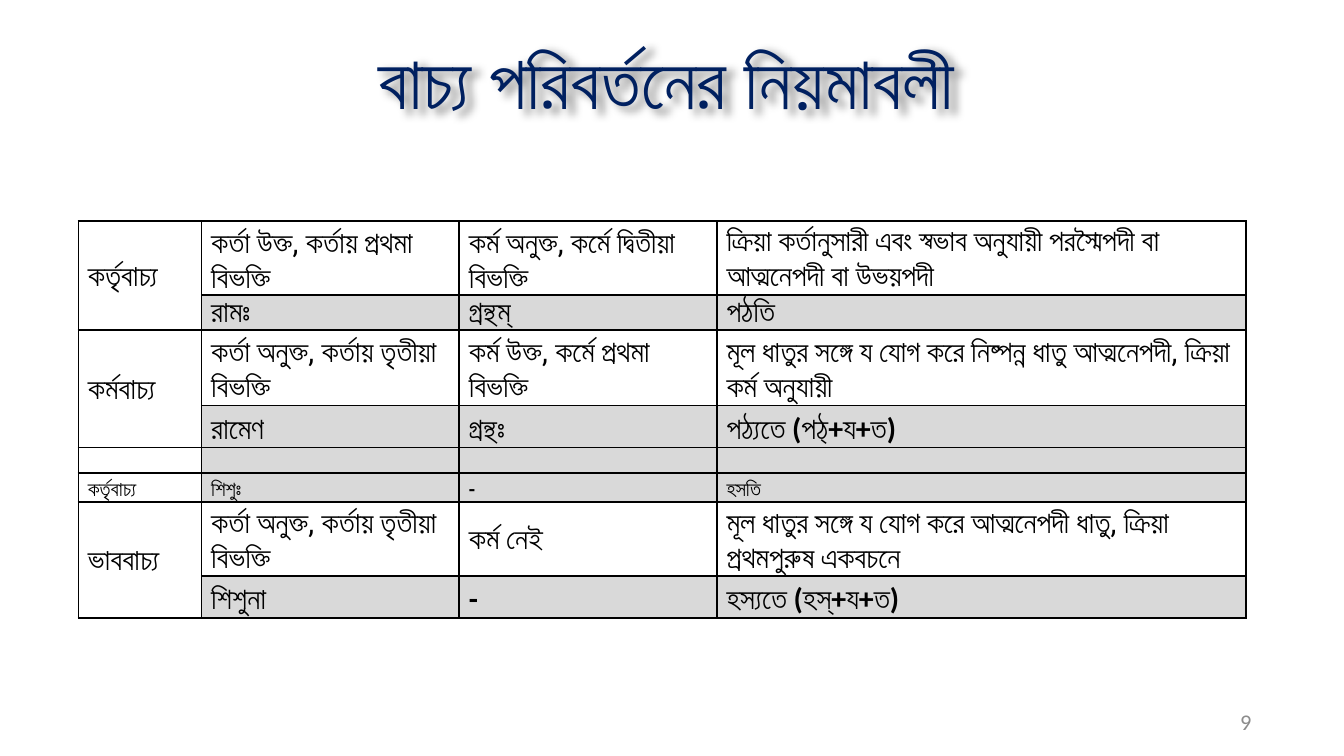
from lxml.etree import SubElement
from pptx import Presentation
from pptx.dml.color import RGBColor
from pptx.enum.text import MSO_ANCHOR as Anchor, PP_ALIGN as Align
from pptx.oxml.ns import qn
from pptx.util import Cm, Pt

TITLE = "বাচ্য পরিবর্তনের নিয়মাবলী"
COLUMNS = [2.33, 4.87, 4.87, 10]
HEIGHTS = [1.4, 0.64, 1.42, 0.79, 0.47, 0.55, 1.4, 0.79]
ROWS = [
    ["কর্তৃবাচ্য", "কর্তা উক্ত, কর্তায় প্রথমা বিভক্তি", "কর্ম অনুক্ত, কর্মে দ্বিতীয়া বিভক্তি",
     "ক্রিয়া কর্তানুসারী এবং স্বভাব অনুযায়ী পরস্মৈপদী বা আত্মনেপদী বা উভয়পদী"],
    ["", "রামঃ", "গ্রন্থম্", "পঠতি"],
    ["কর্মবাচ্য", "কর্তা অনুক্ত, কর্তায় তৃতীয়া বিভক্তি", "কর্ম উক্ত, কর্মে প্রথমা বিভক্তি",
     "মূল ধাতুর সঙ্গে য যোগ করে নিষ্পন্ন ধাতু আত্মনেপদী, ক্রিয়া কর্ম অনুযায়ী"],
    ["", "রামেণ", "গ্রন্থঃ", "পঠ্যতে (পঠ্+য+ত)"],
    ["", "", "", ""],
    ["কর্তৃবাচ্য", "শিশুঃ", "-", "হসতি"],
    ["ভাববাচ্য", "কর্তা অনুক্ত, কর্তায় তৃতীয়া বিভক্তি", "কর্ম নেই",
     "মূল ধাতুর সঙ্গে য যোগ করে আত্মনেপদী ধাতু, ক্রিয়া প্রথমপুরুষ একবচনে"],
    ["", "শিশুনা", "-", "হস্যতে (হস্+য+ত)"],
]
RULE_ROWS = (0, 2, 6)
SMALL_ROWS = (4, 5)
SPACING = {0: 0.96, 1: 0.92, 2: 0.96, 6: 0.96}


def rgb(value):
    return RGBColor.from_string(value)


def apply(target, **values):
    for name, value in values.items():
        setattr(target, name, value)


class Deck:
    ink, navy, grey, shade = "000000", "002060", "8C8C8C", "D9D9D9"
    body_font, title_font = "Calibri", "Roboto"

    def __init__(self):
        self.prs = Presentation()
        apply(self.prs, slide_width=Cm(25.4), slide_height=Cm(14.29))
        self.s = self.prs.slides.add_slide(self.prs.slide_layouts[5])

    def run(self, p, text, size, color, font, bold=False):
        r = p.add_run()
        r.text = text
        apply(r.font, size=Pt(size), name=font, bold=bold)
        r.font.color.rgb = rgb(color)
        for tag in ("a:ea", "a:cs"):
            SubElement(r.font._element, qn(tag), typeface=font)

    def title(self, text, left, top, width, height):
        sp = self.s.shapes.title
        apply(sp, left=Cm(left), top=Cm(top), width=Cm(width), height=Cm(height))
        apply(sp.text_frame, vertical_anchor=Anchor.MIDDLE, word_wrap=True)
        p = sp.text_frame.paragraphs[0]
        p.alignment = Align.CENTER
        self.run(p, text, 40, self.navy, self.title_font, True)
        effects = SubElement(sp._element.spPr, qn("a:effectLst"))
        shadow = SubElement(effects, qn("a:outerShdw"), blurRad="50800", dist="38100",
                            dir="2700000", algn="tl", rotWithShape="0")
        color = SubElement(shadow, qn("a:srgbClr"), val=self.ink)
        SubElement(color, qn("a:alpha"), val="30000")

    def number(self, text, left, top, width, height):
        sp = self.s.shapes.add_textbox(Cm(left), Cm(top), Cm(width), Cm(height))
        apply(sp.text_frame, vertical_anchor=Anchor.MIDDLE, word_wrap=True)
        p = sp.text_frame.paragraphs[0]
        p.alignment = Align.RIGHT
        self.run(p, text, 12, self.grey, self.body_font)

    def borders(self, cell):
        tc_pr = cell._tc.get_or_add_tcPr()
        for side in ("a:lnL", "a:lnR", "a:lnT", "a:lnB"):
            ln = SubElement(tc_pr, qn(side), w=str(Pt(1)))
            fill = SubElement(ln, qn("a:solidFill"))
            SubElement(fill, qn("a:srgbClr"), val=self.ink)

    def cell(self, cell, text, size, bold, shaded, spacing):
        self.borders(cell)
        apply(cell, margin_left=Cm(0.18), margin_right=Cm(0.18), margin_top=0,
              margin_bottom=0, vertical_anchor=Anchor.MIDDLE)
        if shaded:
            cell.fill.solid()
            cell.fill.fore_color.rgb = rgb(self.shade)
        else:
            cell.fill.background()
        p = cell.text_frame.paragraphs[0]
        if not text:
            SubElement(p._p, qn("a:endParaRPr"), sz=str(size * 100))
            return
        p.line_spacing = spacing
        before, comma, after = text.partition(", ")
        if comma:
            cell.margin_top = Cm(0.07)
        for part in filter(None, (before, comma, after)):
            font = self.title_font if part == ", " else self.body_font
            self.run(p, part, size, self.ink, font, bold)

    def table(self, rows, left, top):
        frame = self.s.shapes.add_table(len(rows), len(COLUMNS), Cm(left), Cm(top),
                                        Cm(sum(COLUMNS)), Cm(sum(HEIGHTS)))
        table = frame.table
        apply(table, first_row=False, horz_banding=False)
        for column, width in zip(table.columns, COLUMNS):
            column.width = Cm(width)
        for i, (row, height) in enumerate(zip(rows, HEIGHTS)):
            table.rows[i].height = Cm(height)
            size = 11 if i in SMALL_ROWS else 16
            for j, text in enumerate(row):
                example = j > 0 and i not in RULE_ROWS
                self.cell(table.cell(i, j), text, size, j == 0 or example, example,
                          SPACING.get(i, 1.15))
        for i in RULE_ROWS:
            for blank in table.cell(i + 1, 0).text_frame.paragraphs:
                blank.line_spacing = 0.9
            table.cell(i, 0).merge(table.cell(i + 1, 0))


def main():
    deck = Deck()
    deck.title(TITLE, 2.11, 0.53, 20.96, 1.96)
    deck.table(ROWS, 1.48, 4.18)
    deck.number("9", 17.98, 13.26, 5.92, 0.76)
    deck.prs.save("out.pptx")


if __name__ == "__main__":
    main()
